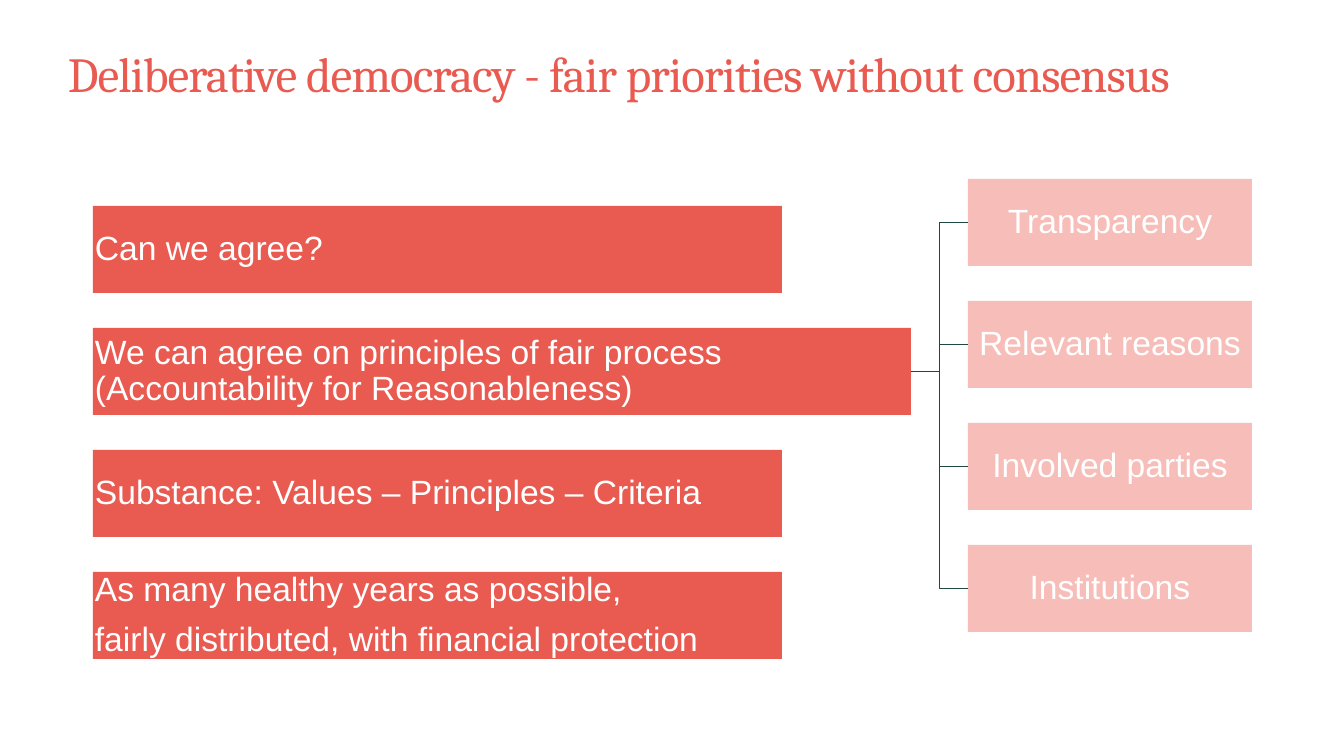
from lxml import etree
from pptx import Presentation
from pptx import util as u
from pptx.dml.color import RGBColor
from pptx.enum import shapes, text
from pptx.oxml.ns import qn

PX = u.Inches(1) / 100.8
COLORS = {"coral": "E95A50", "pink": "F6BDB9", "green": "1E4741", "white": "FFFFFF"}

BOX_HEIGHT, ROW_STEP = 87, 122
STEPS_LEFT, STEPS_TOP = 93, 206
CONDITIONS_LEFT, CONDITIONS_TOP, CONDITIONS_WIDTH = 968, 179, 284

# Text and width of each step
STEPS = [
    ("Can we agree?", 689),
    ("We can agree on principles of fair process (Accountability for Reasonableness)", 818),
    ("Substance: Values – Principles – Criteria", 689),
    ("As many healthy years as possible,\nfairly distributed, with financial protection", 689),
]
PROCESS_ROW = 1
CONDITIONS = ["Transparency", "Relevant reasons", "Involved parties", "Institutions"]


def px(length):
    return u.Emu(round(length * PX))


def color(name):
    return RGBColor.from_string(COLORS[name])


def write(frame, words, *, font, size, ink, align=text.PP_ALIGN.LEFT,
          anchor=text.MSO_ANCHOR.MIDDLE, margin=0, line_spacing=0.9, after=0, tracking=None):
    frame.word_wrap = True
    frame.auto_size = text.MSO_AUTO_SIZE.NONE
    frame.vertical_anchor = anchor
    frame.margin_left = frame.margin_right = px(margin)
    frame.margin_top = frame.margin_bottom = px(margin)
    frame.text = words
    for paragraph in frame.paragraphs:
        paragraph.alignment = align
        paragraph.line_spacing = line_spacing
        paragraph.space_before = u.Pt(0)
        paragraph.space_after = u.Pt(after)
        for run in paragraph.runs:
            run.font.name = font
            run.font.size = u.Pt(size)
            run.font.color.rgb = color(ink)
            if tracking is not None:
                run.font._element.set("spc", str(round(tracking * 100)))


def add_title(slide, words):
    title = slide.shapes.title
    title.left, title.top, title.width, title.height = map(px, (68, 32, 1209, 70))
    write(title.text_frame, words, font="Cambria", size=35, ink="coral",
          anchor=text.MSO_ANCHOR.BOTTOM, line_spacing=u.Pt(41), tracking=-0.7)


def add_box(slide, words, left, top, width, fill, align):
    box = slide.shapes.add_shape(shapes.MSO_SHAPE.RECTANGLE,
                                 px(left), px(top), px(width), px(BOX_HEIGHT))
    box.shadow.inherit = False
    box.fill.solid()
    box.fill.fore_color.rgb = color(fill)
    box.line.fill.background()
    write(box.text_frame, words, font="Arial", size=24, ink="white",
          align=align, margin=2, after=9.5)
    return box


def add_branch(slide, source, target):
    branch = slide.shapes.add_connector(shapes.MSO_CONNECTOR.ELBOW, 0, 0, 0, 0)
    branch.begin_connect(source, 3)  # right side
    branch.end_connect(target, 1)  # left side
    branch.line.color.rgb = color("green")
    branch.line.width = u.Pt(0.5)
    etree.SubElement(branch._element.spPr, qn("a:effectLst"))


def main():
    deck = Presentation()
    deck.slide_width, deck.slide_height = px(1344), px(756)
    slide = deck.slides.add_slide(deck.slide_layouts[5])

    add_title(slide, "Deliberative democracy - fair priorities without consensus")

    # Steps of the argument
    steps = [
        add_box(slide, words, STEPS_LEFT, STEPS_TOP + row * ROW_STEP, width,
                "coral", text.PP_ALIGN.LEFT)
        for row, (words, width) in enumerate(STEPS)
    ]

    # Conditions of a fair process, branching from its step
    for row, words in enumerate(CONDITIONS):
        condition = add_box(slide, words, CONDITIONS_LEFT, CONDITIONS_TOP + row * ROW_STEP,
                            CONDITIONS_WIDTH, "pink", text.PP_ALIGN.CENTER)
        add_branch(slide, steps[PROCESS_ROW], condition)

    deck.save("out.pptx")


if __name__ == "__main__":
    main()
